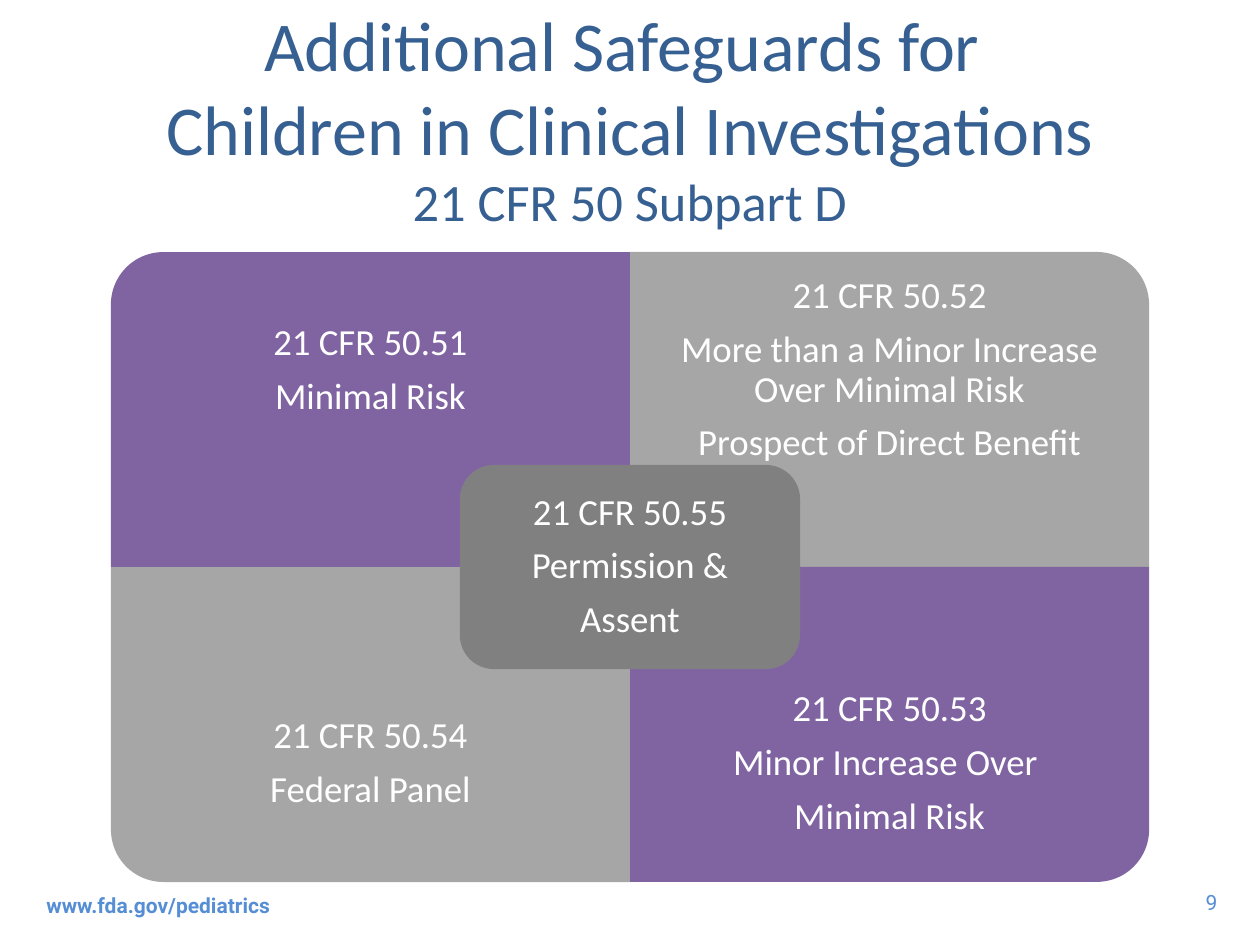
from dataclasses import dataclass

from pptx import Presentation
from pptx.dml.color import RGBColor
from pptx.enum import shapes, text
from pptx.util import Inches, Pt

COLORS = {
    "purple": "8064A2",
    "light_gray": "A6A6A6",
    "dark_gray": "808080",
    "white": "FFFFFF",
    "title": "376092",
    "footer": "558ED5",
}
CENTER_X, CENTER_Y = 5, 4.5
QUADRANT_W, QUADRANT_H = 4.12, 2.5
LABEL_H = 1.88
CONSENT_W, CONSENT_H = 2.7, 1.62
CONSENT_INSET = 0.08


@dataclass(frozen=True)
class Box:
    left: float
    top: float
    width: float
    height: float

    def lengths(self) -> tuple:
        return tuple(Inches(v) for v in (self.left, self.top, self.width, self.height))

    def quarter_turned(self) -> "Box":
        shift = (self.width - self.height) / 2
        return Box(self.left + shift, self.top - shift, self.height, self.width)


@dataclass(frozen=True)
class Quadrant:
    column: int
    row: int
    rotation: int
    color: str
    lines: tuple[str, ...]


@dataclass(frozen=True)
class Style:
    size: float
    color: str
    font: str = "Calibri"
    bold: bool = False


QUADRANTS = (
    Quadrant(0, 0, 270, "purple", ("21 CFR 50.51", "Minimal Risk")),
    Quadrant(1, 0, 0, "light_gray", (
        "21 CFR 50.52",
        "More than a Minor Increase Over Minimal Risk",
        "Prospect of Direct Benefit",
    )),
    Quadrant(0, 1, 180, "light_gray", ("21 CFR 50.54", "Federal Panel")),
    Quadrant(1, 1, 90, "purple", ("21 CFR 50.53", "Minor Increase Over ", "Minimal Risk")),
)
CONSENT_LINES = ("21 CFR 50.55", "Permission &", "Assent")
LABEL_STYLE = Style(21, "white")
TITLE_STYLE = Style(40, "title")
SUBTITLE_STYLE = Style(30, "title")


def add_run(paragraph, words: str, style: Style) -> None:
    run = paragraph.add_run()
    run.text = words
    run.font.name = style.font
    run.font.size = Pt(style.size)
    run.font.bold = style.bold
    run.font.color.rgb = RGBColor.from_string(COLORS[style.color])


def add_frame(slide, box: Box, anchor=text.MSO_ANCHOR.MIDDLE, wrap: bool = True):
    frame = slide.shapes.add_textbox(*box.lengths()).text_frame
    frame.word_wrap = wrap
    frame.vertical_anchor = anchor
    return frame


def add_panel(slide, kind, box: Box, color: str, rotation: int = 0) -> None:
    panel = slide.shapes.add_shape(kind, *box.lengths())
    panel.rotation = rotation
    panel.shadow.inherit = False
    panel.fill.solid()
    panel.fill.fore_color.rgb = RGBColor.from_string(COLORS[color])
    panel.line.fill.background()


def add_label(slide, box: Box, lines: tuple[str, ...], inset: float) -> None:
    frame = add_frame(slide, box)
    frame.margin_left = frame.margin_right = Inches(inset)
    frame.margin_top = frame.margin_bottom = Inches(inset)
    for index, line in enumerate(lines):
        paragraph = frame.add_paragraph() if index else frame.paragraphs[0]
        paragraph.alignment = text.PP_ALIGN.CENTER
        paragraph.line_spacing = 0.9
        paragraph.space_after = Pt(8)
        add_run(paragraph, line, LABEL_STYLE)


def add_quadrant(slide, quadrant: Quadrant) -> None:
    left = CENTER_X + (quadrant.column - 1) * QUADRANT_W
    top = CENTER_Y + (quadrant.row - 1) * QUADRANT_H
    area = Box(left, top, QUADRANT_W, QUADRANT_H)
    panel = area.quarter_turned() if quadrant.rotation % 180 else area
    add_panel(slide, shapes.MSO_SHAPE.ROUND_1_RECTANGLE, panel,
              quadrant.color, quadrant.rotation)
    label_top = top + quadrant.row * (QUADRANT_H - LABEL_H)
    add_label(slide, Box(left, label_top, QUADRANT_W, LABEL_H), quadrant.lines, 0.16)


def add_consent(slide) -> None:
    left, top = CENTER_X - CONSENT_W / 2, CENTER_Y - CONSENT_H / 2
    add_panel(slide, shapes.MSO_SHAPE.ROUNDED_RECTANGLE,
              Box(left, top, CONSENT_W, CONSENT_H), "dark_gray")
    label = Box(left + CONSENT_INSET, top + CONSENT_INSET,
                CONSENT_W - 2 * CONSENT_INSET, CONSENT_H - 2 * CONSENT_INSET)
    add_label(slide, label, CONSENT_LINES, 0.09)


def add_title(slide) -> None:
    heading = add_frame(slide, Box(0.5, 0.3, 9, 1.25)).paragraphs[0]
    heading.alignment = text.PP_ALIGN.CENTER
    for line in ("Additional Safeguards for ", "Children in Clinical Investigations"):
        add_run(heading, line, TITLE_STYLE)
        heading.add_line_break()
    add_run(heading, "21 CFR 50 Subpart D", SUBTITLE_STYLE)


def add_footer(slide) -> None:
    address = add_frame(slide, Box(0.27, 6.98, 3.17, 0.4)).paragraphs[0]
    add_run(address, "www.fda.gov/pediatrics", Style(12, "footer", "Roboto", True))
    page_number = add_frame(slide, Box(9.35, 7.01, 0.41, 0.3),
                            text.MSO_ANCHOR.TOP, False).paragraphs[0]
    page_number.alignment = text.PP_ALIGN.RIGHT
    add_run(page_number, "9", Style(12, "footer", "Roboto"))


def main() -> None:
    deck = Presentation()
    deck.slide_width, deck.slide_height = Inches(10), Inches(7.5)
    slide = deck.slides.add_slide(deck.slide_layouts[6])
    for quadrant in QUADRANTS:
        add_quadrant(slide, quadrant)
    add_consent(slide)
    add_title(slide)
    add_footer(slide)
    deck.save("out.pptx")


if __name__ == "__main__":
    main()
